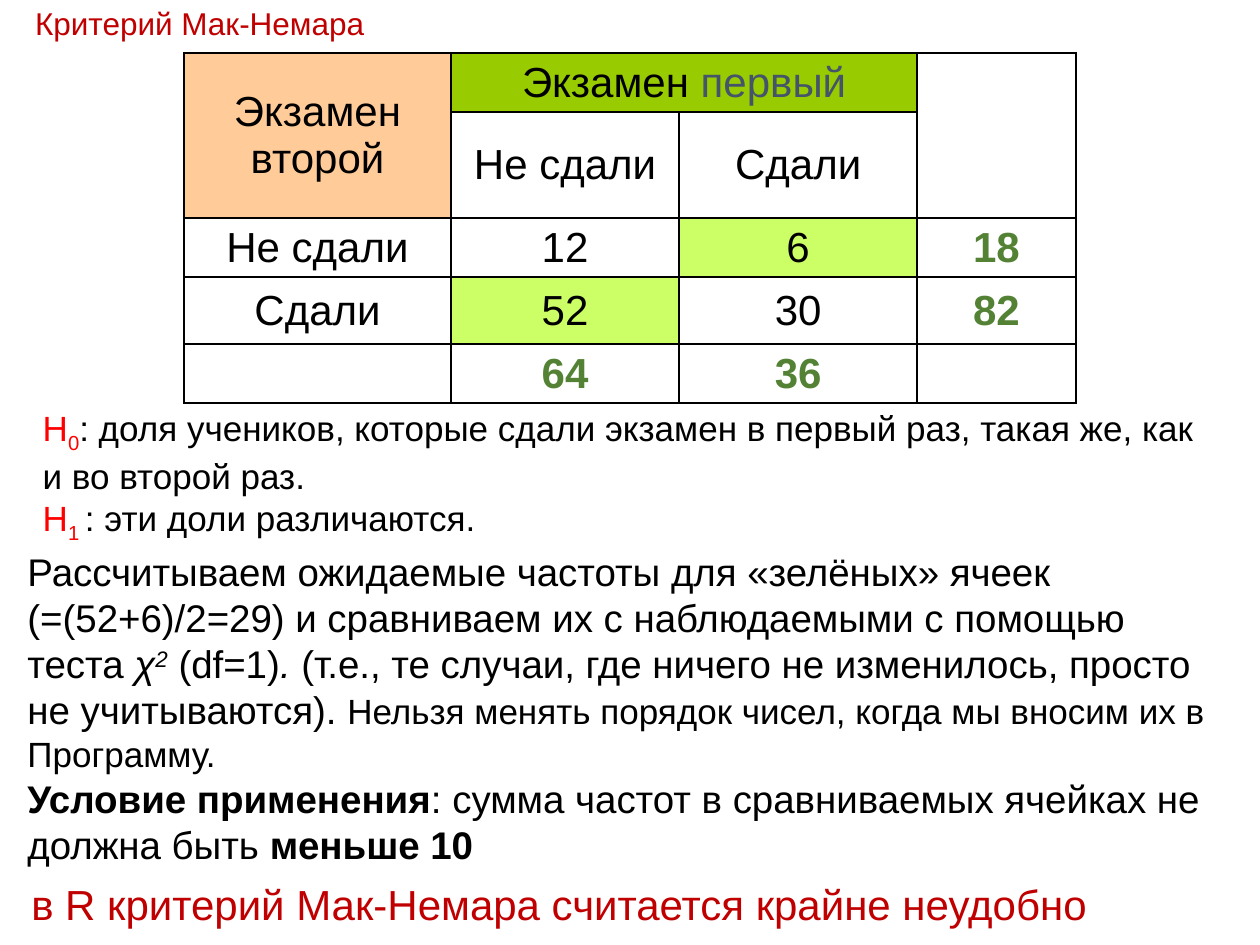
import pptx
import pptx.util
import pptx.dml.color
import pptx.enum.shapes
import pptx.enum.text
import pptx.oxml
import pptx.oxml.ns
from lxml import etree

Inches, Pt = pptx.util.Inches, pptx.util.Pt
ALIGN = pptx.enum.text.PP_ALIGN
ANCHOR = pptx.enum.text.MSO_ANCHOR

COLORS = {
    "black": "000000", "white": "FFFFFF", "red": "FF0000", "title": "C00000",
    "slate": "44546A", "total": "548235", "peach": "FFCC99",
    "header": "99CC00", "changed": "CCFF66",
}

TOTAL = {"color": "total", "bold": True}
COLUMNS = [2.12, 1.81, 1.89, 1.26]
ROWS = [0.47, 0.84, 0.47, 0.53, 0.47]
CELLS = [
    [[("Экзамен второй", {})], [("Экзамен ", {}), ("первый", {"color": "slate"})], [], []],
    [[], [("Не сдали", {})], [("Сдали", {})], []],
    [[("Не сдали", {})], [("12", {})], [("6", {})], [("18", TOTAL)]],
    [[("Сдали", {})], [("52", {})], [("30", {})], [("82", TOTAL)]],
    [[], [("64", TOTAL)], [("36", TOTAL)], []],
]
FILLS = {(0, 0): "peach", (0, 1): "header", (2, 2): "changed", (3, 1): "changed"}
MERGES = [((0, 0), (1, 0)), ((0, 1), (0, 2)), ((0, 3), (1, 3))]

METHOD = [
    [
        ("Рассчитываем ожидаемые частоты для «зелёных» ячеек (=(52+6)/2=29) "
         "и сравниваем их с наблюдаемыми с помощью теста ", {}),
        ("χ", {"italic": True}),
        ("2", {"italic": True, "baseline": 30}),
        (" (df=1)", {}),
        (". ", {"italic": True}),
        ("(т.е., те случаи, где ничего не изменилось, просто не учитываются). ", {}),
        ("Нельзя менять порядок чисел, когда мы вносим их в Программу.", {"size": 20}),
    ],
    [
        ("Условие применения", {"bold": True}),
        (": сумма частот в сравниваемых ячейках не должна быть ", {}),
        ("меньше 10", {"bold": True}),
    ],
]
HYPOTHESES = [
    [
        ("Н", {"color": "red"}),
        ("0", {"color": "red", "baseline": -25}),
        (": доля учеников, которые сдали экзамен в первый раз, такая же, "
         "как и во второй раз.", {}),
    ],
    [
        ("Н", {"color": "red"}),
        ("1 ", {"color": "red", "baseline": -25}),
        (": эти доли различаются.", {}),
    ],
]
TITLE = [[("Критерий Мак-Немара", {"color": "title"})]]
REMARK = [[("в R критерий Мак-Немара считается крайне неудобно", {"color": "title"})]]

TEXT_BOXES = [
    (HYPOTHESES, (0.24, 3.18, 9.45, 1.11), 20, True),
    (TITLE, (0.18, -0.02, 2.91, 0.4), 18, False),
    (REMARK, (0.15, 6.92, 8.67, 0.5), 24, False),
]


def rgb(name):
    return pptx.dml.color.RGBColor.from_string(COLORS[name])


def write(frame, paragraphs, size, align):
    for index, spans in enumerate(paragraphs):
        para = frame.paragraphs[0] if index == 0 else frame.add_paragraph()
        para.alignment = align
        for text, style in spans:
            span = para.add_run()
            span.text = text
            span.font.name = "Arial"
            span.font.size = Pt(style.get("size", size))
            span.font.bold = style.get("bold", False)
            span.font.italic = style.get("italic", False)
            span.font.color.rgb = rgb(style.get("color", "black"))
            if "baseline" in style:
                span.font._element.set("baseline", str(style["baseline"] * 1000))


def add_borders(cell):
    properties = cell._tc.get_or_add_tcPr()
    for index, side in enumerate(("lnL", "lnR", "lnT", "lnB")):
        line = etree.Element(pptx.oxml.ns.qn("a:" + side), w=str(Pt(1)))
        fill = etree.SubElement(line, pptx.oxml.ns.qn("a:solidFill"))
        etree.SubElement(fill, pptx.oxml.ns.qn("a:srgbClr"), val=COLORS["black"])
        properties.insert(index, line)


def add_exam_table(page):
    frame = page.shapes.add_table(
        len(ROWS), len(COLUMNS), Inches(1.46), Inches(0.42),
        Inches(sum(COLUMNS)), Inches(sum(ROWS)))
    table = frame.table
    table.first_row = table.horz_banding = False
    for column, width in zip(table.columns, COLUMNS):
        column.width = Inches(width)
    for row, height in zip(table.rows, ROWS):
        row.height = Inches(height)
    for start, end in MERGES:
        table.cell(*start).merge(table.cell(*end))
    for r, row in enumerate(CELLS):
        for c, spans in enumerate(row):
            cell = table.cell(r, c)
            cell.vertical_anchor = ANCHOR.MIDDLE
            cell.margin_top = cell.margin_bottom = Inches(0.04)
            if (r, c) in FILLS:
                cell.fill.solid()
                cell.fill.fore_color.rgb = rgb(FILLS[r, c])
            else:
                cell.fill.background()
            add_borders(cell)
            write(cell.text_frame, [spans], 24, ALIGN.CENTER)


def add_method(page):
    box = page.shapes.add_shape(
        pptx.enum.shapes.MSO_SHAPE.RECTANGLE, *map(Inches, (0.12, 4.3, 9.57, 2.66)))
    box.shadow.inherit = False
    box.fill.solid()
    box.fill.fore_color.rgb = rgb("white")
    box.line.fill.background()
    box.text_frame.word_wrap = True
    box.text_frame.vertical_anchor = ANCHOR.TOP
    write(box.text_frame, METHOD, 22, ALIGN.LEFT)


def main():
    deck = pptx.Presentation()
    deck.slide_width, deck.slide_height = Inches(10), Inches(7.5)
    page = deck.slides.add_slide(deck.slide_layouts[6])
    add_exam_table(page)
    add_method(page)
    for paragraphs, place, size, wrap in TEXT_BOXES:
        box = page.shapes.add_textbox(*map(Inches, place))
        box.text_frame.word_wrap = wrap
        write(box.text_frame, paragraphs, size, ALIGN.LEFT)
    deck.save("out.pptx")


if __name__ == "__main__":
    main()
